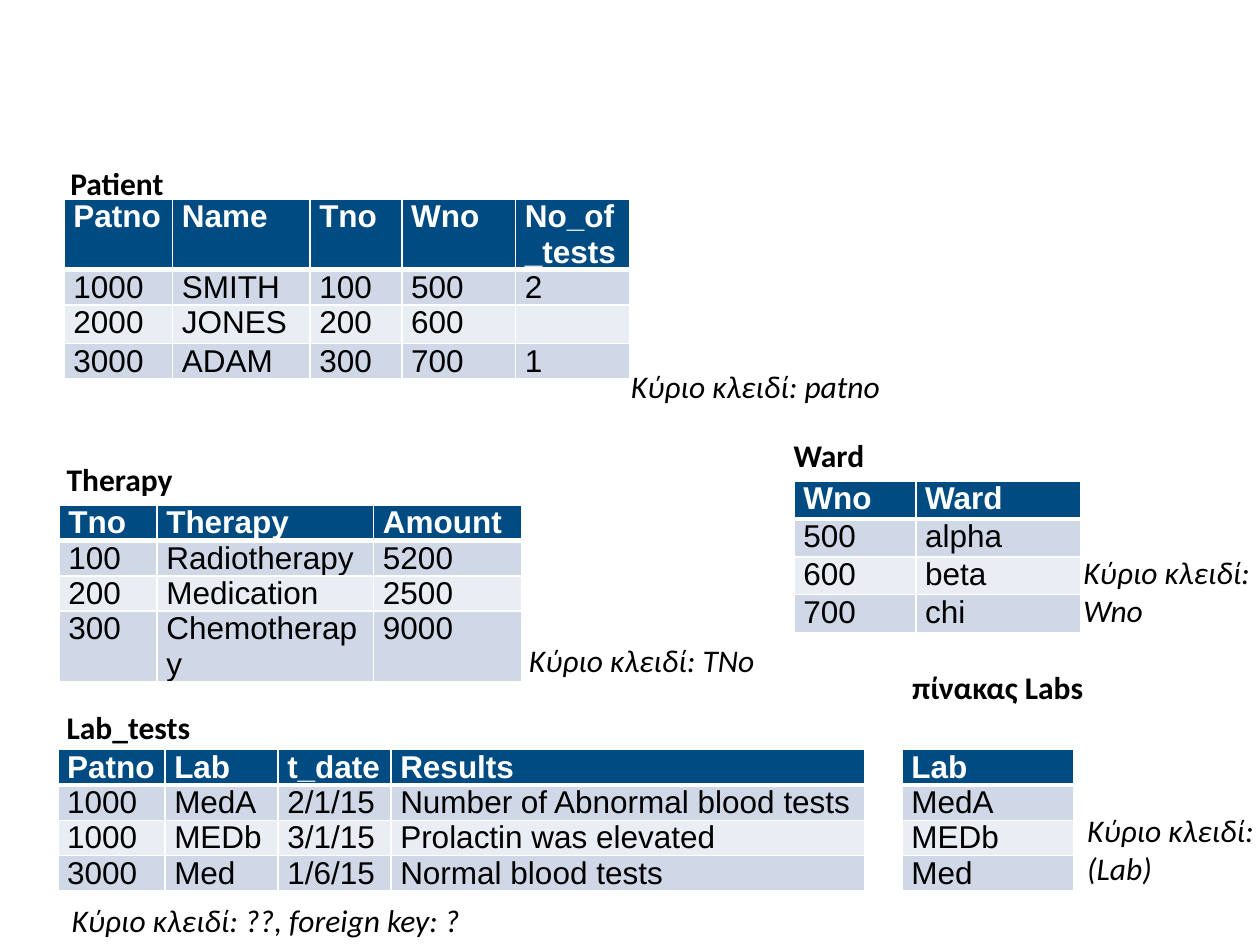
from lxml.etree import SubElement
from pptx import Presentation
from pptx.dml.color import RGBColor
from pptx.enum.text import MSO_AUTO_SIZE
from pptx.oxml.ns import qn
from pptx.util import Pt

HEAD, BANDS = "004B82", ("D0D8E8", "E9EDF4")
WHITE, BLACK = "FFFFFF", "000000"

# Tables: left, top, column widths, row heights, rows (header first)
TABLES = [
    (36.7, 113.8, (62, 78.5, 52.5, 65, 65), (40, 20, 20, 20), [
        ("Patno", "Name", "Tno", "Wno", "No_of_tests"),
        ("1000", "SMITH", "100", "500", "2"),
        ("2000", "JONES", "200", "600", ""),
        ("3000", "ADAM", "300", "700", "1")]),
    (33.8, 288.7, (56, 123.8, 84.7), (20, 20, 20, 40), [
        ("Tno", "Therapy", "Amount"),
        ("100", "Radiotherapy", "5200"),
        ("200", "Medication", "2500"),
        ("300", "Chemotherapy", "9000")]),
    (33.1, 428.4, (61.2, 64.6, 64.6, 270.6), (20, 20, 20, 20), [
        ("Patno", "Lab", "t_date", "Results"),
        ("1000", "MedA", "2/1/15", "Number of Abnormal blood tests"),
        ("1000", "MEDb", "3/1/15", "Prolactin was elevated"),
        ("3000", "Med", "1/6/15", "Normal blood tests")]),
    (515.5, 428.4, (98,), (20, 20, 20, 20), [
        ("Lab",), ("MedA",), ("MEDb",), ("Med",)]),
    (453.8, 275, (69.6, 94.1), (21.6, 21.6, 21.6, 21.6), [
        ("Wno", "Ward"), ("500", "alpha"), ("600", "beta"), ("700", "chi")]),
]

# Table names: text, left, top, width, wrap
NAMES = [
    ("Patient", 33.1, 90, 68.4, False),
    ("Therapy", 31, 259.2, 79.9, False),
    ("Ward", 446.4, 245.5, 55.4, False),
    ("Lab_tests", 31, 401, 85.7, False),
    ("πίνακας Labs", 514.1, 378, 128.9, True),
]

# Key notes: text, left, top, width, wrap
KEYS = [
    ("Κύριο κλειδί: patno", 353.5, 205.9, 158.4, False),
    ("Κύριο κλειδί: TNo", 295.2, 362.9, 149, False),
    ("Κύριο κλειδί: Wno", 612, 312.5, 114.5, True),
    ("Κύριο κλειδί: (Lab)", 614.2, 460.1, 115.2, True),
    ("Κύριο κλειδί: ??, foreign key: ?", 33.8, 511.2, 243.4, False),
]


def rgb(code):
    return RGBColor.from_string(code)


def style(frame, face, color, bold=False, slant=False):
    for run in frame.paragraphs[0].runs:
        font = run.font
        font.name, font.size = face, Pt(18)
        font.bold, font.italic = bold, slant
        font.color.rgb = rgb(color)


def edge(cell, tag, width):
    line = SubElement(cell._tc.get_or_add_tcPr(), qn("a:" + tag), w=str(Pt(width)))
    fill = SubElement(line, qn("a:solidFill"))
    SubElement(fill, qn("a:srgbClr"), val=WHITE)


def fill_cell(cell, text, row):
    head = row == 0
    cell.margin_left = cell.margin_right = Pt(5.3)
    cell.margin_top = cell.margin_bottom = 0
    edge(cell, "lnL", 1)
    edge(cell, "lnR", 1)
    edge(cell, "lnT", 3 if row == 1 else 1)
    edge(cell, "lnB", 3 if head else 1)
    cell.fill.solid()
    cell.fill.fore_color.rgb = rgb(HEAD if head else BANDS[(row - 1) % 2])
    cell.text_frame.text = text
    style(cell.text_frame, "Arial", WHITE if head else BLACK, bold=head)


def add_grid(slide, left, top, widths, heights, rows):
    grid = slide.shapes.add_table(
        len(rows), len(widths), Pt(left), Pt(top),
        Pt(sum(widths)), Pt(sum(heights))).table
    for col, width in zip(grid.columns, widths):
        col.width = Pt(width)
    for line, height in zip(grid.rows, heights):
        line.height = Pt(height)
    for r, row in enumerate(rows):
        for c, text in enumerate(row):
            fill_cell(grid.cell(r, c), text, r)


def add_label(slide, text, left, top, width, wrap, **look):
    # Wrapped labels take two lines when the text is a key note
    high = 51 if wrap and look.get("slant") else 29
    box = slide.shapes.add_textbox(Pt(left), Pt(top), Pt(width), Pt(high))
    frame = box.text_frame
    frame.word_wrap = wrap
    frame.auto_size = MSO_AUTO_SIZE.SHAPE_TO_FIT_TEXT
    frame.text = text
    style(frame, "Calibri", BLACK, **look)


def main():
    deck = Presentation()
    deck.slide_width, deck.slide_height = Pt(720), Pt(540)
    slide = deck.slides.add_slide(deck.slide_layouts[6])
    for table in TABLES:
        add_grid(slide, *table)
    for name in NAMES:
        add_label(slide, *name, bold=True)
    for key in KEYS:
        add_label(slide, *key, slant=True)
    deck.save("out.pptx")


if __name__ == "__main__":
    main()
